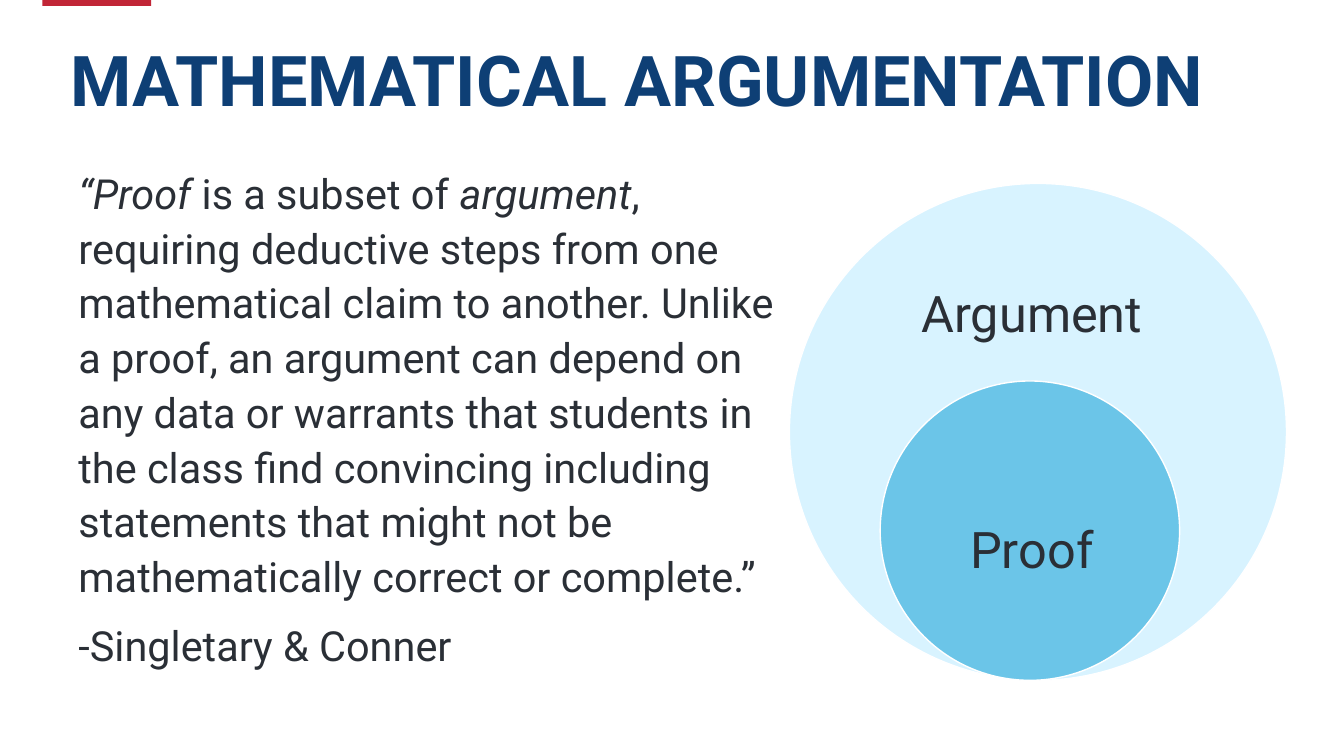
import pptx
import pptx.util
import pptx.dml.color
import pptx.enum.shapes
import pptx.enum.text
import pptx.oxml
import pptx.oxml.ns

Inches = pptx.util.Inches
Pt = pptx.util.Pt
SHAPE = pptx.enum.shapes.MSO_SHAPE
ALIGN = pptx.enum.text.PP_ALIGN

FONT = "Roboto"
COLORS = {
    "red": "C12637",
    "navy": "0E3F75",
    "ink": "2A2F36",
    "pale": "B3E9FF",
    "blue": "0098D3",
    "white": "FFFFFF",
}

# Each paragraph is a list of (text, italic)
TITLE = [[("MATHEMATICAL ARGUMENTATION", False)]]
QUOTE = [
    [
        ("“Proof", True),
        (" is a subset of ", False),
        ("argument", True),
        (", requiring deductive steps from one mathematical claim to another. "
         "Unlike a proof, an argument can depend on any data or warrants that "
         "students in the class find convincing including statements that might "
         "not be mathematically correct or complete.”", False),
    ],
    [("-Singletary & Conner", False)],
]
# Label, label top, circle left, circle size, circle colour
SETS = [
    ("Argument", 2.75, 7.83, 4.93, "pale"),
    ("Proof", 5.09, 8.73, 2.97, "blue"),
]
BASE = 6.75  # both circles rest on this level


def shade(name):
    return pptx.dml.color.RGBColor.from_string(COLORS[name])


def add_fill(slide, kind, box, color):
    shape = slide.shapes.add_shape(kind, *map(Inches, box))
    shape.shadow.inherit = False
    shape.fill.solid()
    shape.fill.fore_color.rgb = shade(color)
    shape.line.fill.background()
    return shape


def add_ring(slide, left, size, color):
    """Add a half-transparent circle with a thin white edge."""
    ring = add_fill(slide, SHAPE.OVAL, (left, BASE - size, size, size), color)
    ring.line.color.rgb = shade("white")
    ring.line.width = Pt(1)
    tint = ring.fill._xPr.find(".//" + pptx.oxml.ns.qn("a:srgbClr"))
    alpha = pptx.oxml.parse_xml(
        "<a:alpha %s val='50000'/>" % pptx.oxml.ns.nsdecls("a"))
    tint.append(alpha)


def add_text(slide, box, paras, size, color="ink", bold=False,
             align=ALIGN.LEFT, pitch=1.0, after=0):
    frame = slide.shapes.add_textbox(*map(Inches, box)).text_frame
    frame.word_wrap = True
    for i, parts in enumerate(paras):
        para = frame.add_paragraph() if i else frame.paragraphs[0]
        para.alignment = align
        para.line_spacing = pitch
        para.space_after = Pt(after)
        for text, slant in parts:
            run = para.add_run()
            run.text = text
            run.font.name = FONT
            run.font.size = Pt(size)
            run.font.bold = bold
            run.font.italic = slant
            run.font.color.rgb = shade(color)


def main():
    deck = pptx.Presentation()
    deck.slide_width = Inches(13.33)
    deck.slide_height = Inches(7.5)
    slide = deck.slides.add_slide(deck.slide_layouts[6])

    add_fill(slide, SHAPE.RECTANGLE, (0.42, -0.04, 1.08, 0.1), "red")
    add_text(slide, (0.6, 0.41, 12.5, 1.45), TITLE, 50, "navy",
             bold=True, pitch=0.9)
    add_text(slide, (0.68, 1.57, 7.23, 5.33), QUOTE, 29.6,
             pitch=1.1, after=10)

    for _, _, left, size, color in SETS:
        add_ring(slide, left, size, color)
    for label, top, *_ in SETS:
        add_text(slide, (8.95, top, 2.57, 0.72), [[(label, False)]], 36,
                 align=ALIGN.CENTER)

    deck.save("out.pptx")


if __name__ == "__main__":
    main()
